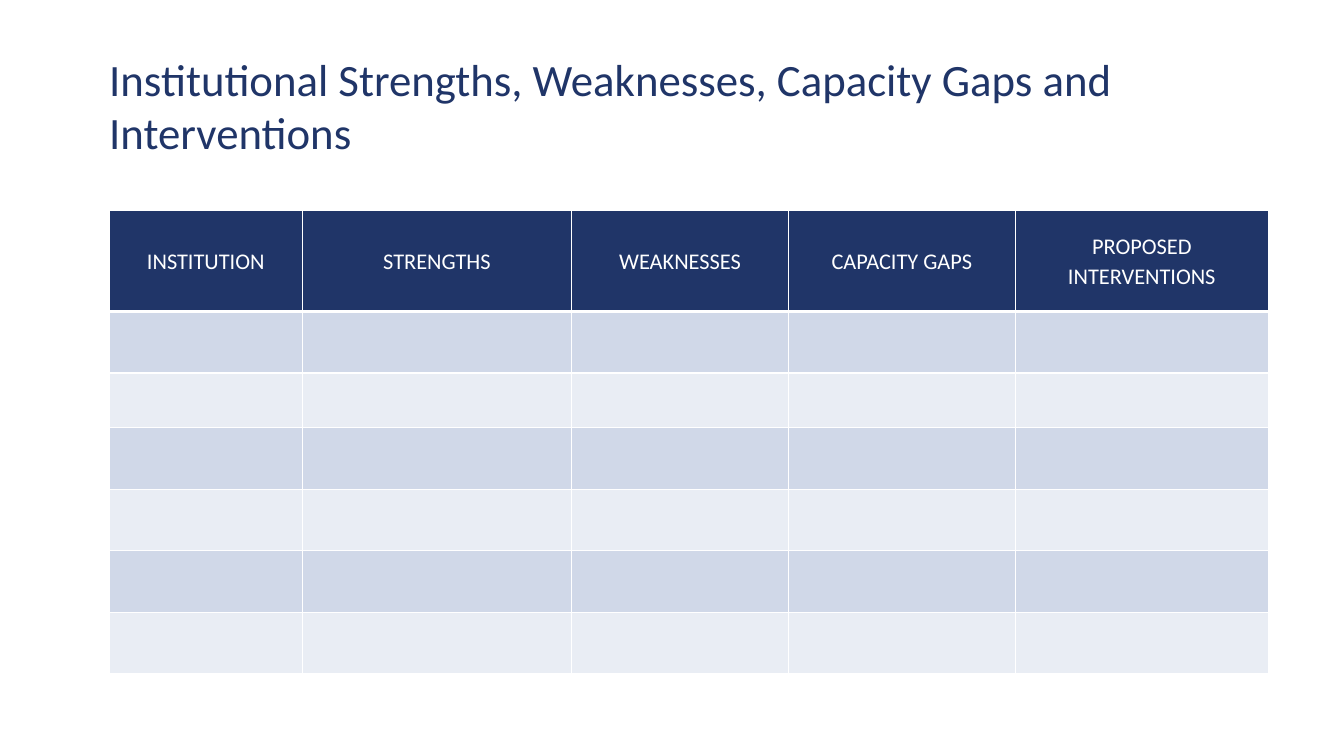
from dataclasses import dataclass

from lxml.etree import SubElement as Sub
from pptx import Presentation
from pptx.dml.color import RGBColor as Rgb
from pptx.enum.text import MSO_ANCHOR as Anchor, PP_ALIGN as Align
from pptx.oxml.ns import qn
from pptx.util import Pt


@dataclass(frozen=True)
class Theme:
    """Colours, font and type sizes of the slide."""
    navy: str = "203568"
    white: str = "FFFFFF"
    bands: tuple = ("D0D8E8", "E9EDF4")
    face: str = "Calibri"
    title: int = 32
    head: int = 16


THEME = Theme()
HEADS = ("INSTITUTION", "STRENGTHS", "WEAKNESSES", "CAPACITY GAPS",
         "PROPOSED INTERVENTIONS")
WIDTHS = (138, 192.25, 155, 162, 180.75)
HEIGHTS = (72.5, 44, 39, 44, 44, 44, 44)


def apply(item, **form):
    """Set each format value on the item."""
    for name, value in form.items():
        setattr(item, name, value)


def write(frame, text, size, color, align, **form):
    """Put one styled paragraph into a text frame."""
    para = frame.paragraphs[0]
    para.text = text
    apply(para, alignment=align, **form)
    apply(para.font, name=THEME.face, size=Pt(size), bold=False)
    para.font.color.rgb = Rgb.from_string(color)


def edge(cell, side, width):
    """Draw one white border of a cell."""
    line = Sub(cell._tc.get_or_add_tcPr(), qn(f"a:ln{side}"), w=str(Pt(width)))
    Sub(Sub(line, qn("a:solidFill")), qn("a:srgbClr"), val=THEME.white)


def paint(cell, row):
    """Give a cell its borders and the fill of its row."""
    thick = {"T": 3 if row == 1 else 1, "B": 3 if row == 0 else 1}
    for side in "LRTB":
        edge(cell, side, thick.get(side, 1))
    color = THEME.bands[(row - 1) % 2] if row else THEME.navy
    cell.fill.solid()
    cell.fill.fore_color.rgb = Rgb.from_string(color)


def add_title(slide, text):
    """Place and format the title."""
    title = slide.shapes.title
    apply(title, left=Pt(78), top=Pt(36), width=Pt(834), height=Pt(78))
    frame = title.text_frame
    apply(frame, margin_left=0, margin_right=0, margin_top=0, margin_bottom=0,
          word_wrap=True, vertical_anchor=Anchor.MIDDLE)
    write(frame, text, THEME.title, THEME.navy, Align.LEFT)


def add_grid(slide):
    """Add the table with its header and blank banded rows."""
    table = slide.shapes.add_table(
        len(HEIGHTS), len(WIDTHS), Pt(78), Pt(150),
        Pt(sum(WIDTHS)), Pt(sum(HEIGHTS))).table
    for col, width in zip(table.columns, WIDTHS):
        col.width = Pt(width)
    for i, height in enumerate(HEIGHTS):
        table.rows[i].height = Pt(height)
        for cell in table.rows[i].cells:
            paint(cell, i)
    for cell, text in zip(table.rows[0].cells, HEADS):
        apply(cell, margin_left=Pt(4.5), margin_right=Pt(4.5), margin_top=0,
              margin_bottom=0, vertical_anchor=Anchor.MIDDLE)
        write(cell.text_frame, text, THEME.head, THEME.white, Align.CENTER,
              line_spacing=1.07)


def main():
    """Build and save the slide."""
    deck = Presentation()
    apply(deck, slide_width=Pt(960), slide_height=Pt(540))
    slide = deck.slides.add_slide(deck.slide_layouts[5])
    add_title(slide, "Institutional Strengths, Weaknesses, Capacity Gaps "
                     "and Interventions")
    add_grid(slide)
    deck.save("out.pptx")


if __name__ == "__main__":
    main()
